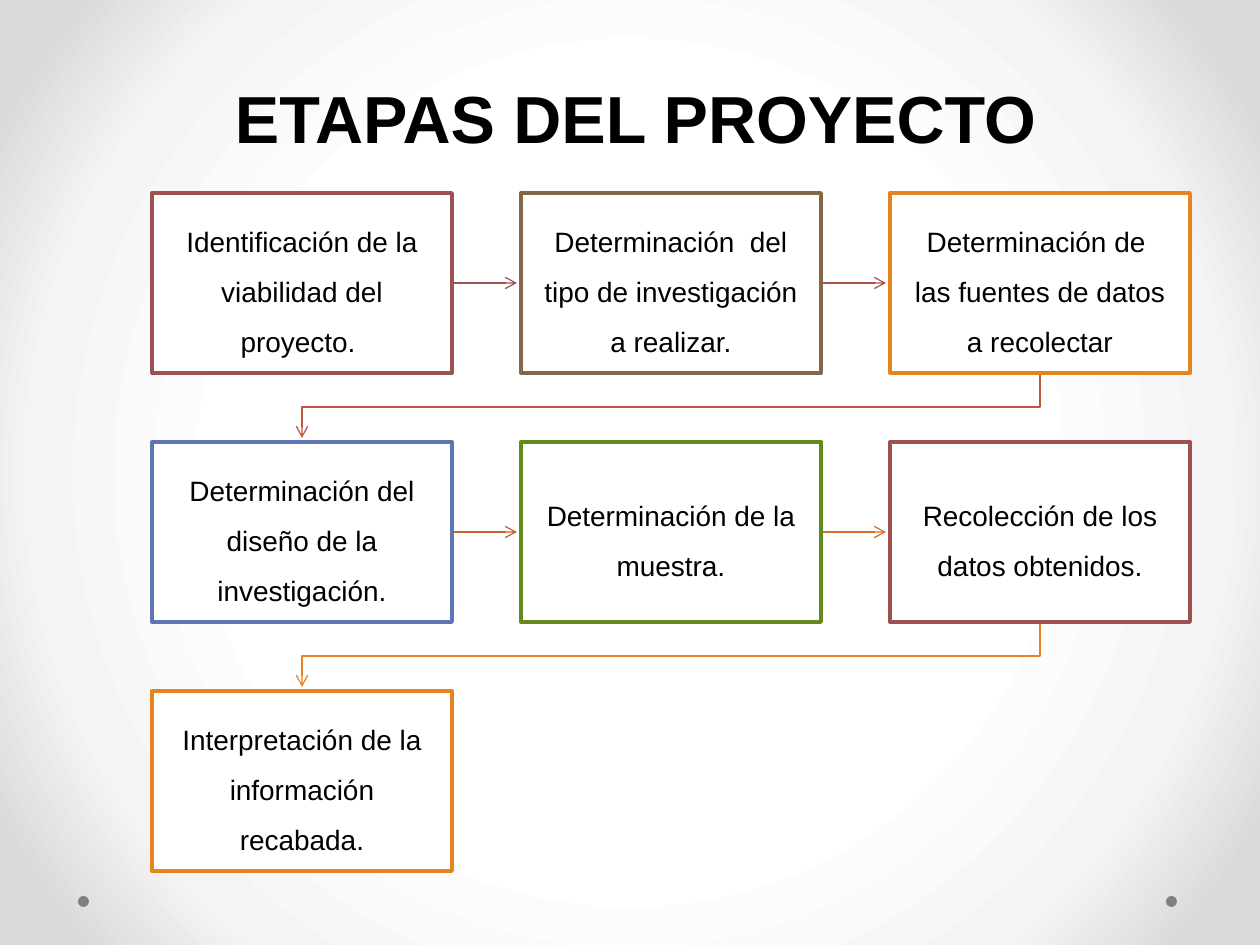
from lxml import etree
from pptx import Presentation
from pptx import util as u
from pptx.dml import color as dml
from pptx.enum import shapes, text
from pptx.oxml import ns

SCALE = 914400 // 126
LEFT, TOP, WIDE, HIGH = 152, 193, 300, 180
STEP, DROP, GAP, COLS = 369, 249, 4, 3

STAGES = [
    ("Identificación de la viabilidad del proyecto. ", "9C5252", "9C5252"),
    ("Determinación  del tipo de investigación a realizar.", "846648", "AB5248"),
    ("Determinación de  las fuentes de datos a recolectar", "E68422", "BB573D"),
    ("Determinación del diseño de la investigación.", "6076B4", "CB6032"),
    ("Determinación de la muestra.", "63891F", "D9702A"),
    ("Recolección de los datos obtenidos.", "9C5252", "E68422"),
    ("Interpretación de la información recabada.", "E68422", None),
]
HEAD = {"size": u.Pt(38), "name": "Arial", "bold": True}
BODY = {"size": u.Pt(16), "name": "Arial", "bold": False}
MID = {"alignment": text.PP_ALIGN.CENTER, "line_spacing": 1.5}
FRAME = {"word_wrap": True, "auto_size": text.MSO_AUTO_SIZE.NONE}


def px(*nums):
    return [u.Emu(num * SCALE) for num in nums]


def tint(code):
    return dml.RGBColor.from_string(code)


def apply(item, vals):
    for key, val in vals.items():
        setattr(item, key, val)


def add(root, tag, **vals):
    return etree.SubElement(root, ns.qn(tag), vals)


def paint(shape, fill, line=None, width=0):
    shape.shadow.inherit = False
    shape.fill.solid()
    shape.fill.fore_color.rgb = tint(fill)
    if line:
        shape.line.color.rgb = tint(line)
        shape.line.width = u.Pt(width)
    else:
        shape.line.fill.background()


def write(shape, words, font, frame, para):
    apply(shape.text_frame, {**FRAME, **frame})
    line = shape.text_frame.paragraphs[0]
    apply(line, {**MID, **para})
    run = line.add_run()
    run.text = words
    apply(run.font, font)
    run.font.color.rgb = tint("000000")


def add_back(slide):
    fill = slide.background.fill
    fill.gradient()
    grad = slide.background._cSld.find(".//" + ns.qn("a:gradFill"))
    for child in list(grad):
        grad.remove(child)
    stops = add(grad, "a:gsLst")
    for pos, code in ((50, "FFFFFF"), (76, "F4F4F4"), (92, "DADADA")):
        stop = add(stops, "a:gs", pos=str(pos * 1000))
        add(stop, "a:srgbClr", val=code)
    shade = add(grad, "a:path", path="circle")
    add(shade, "a:fillToRect", **dict.fromkeys("ltrb", "50000"))


def add_title(slide):
    title = slide.shapes.title
    title.left, title.top, title.width, title.height = px(63, 31, 1134, 861)
    frame = {"vertical_anchor": text.MSO_ANCHOR.TOP, "margin_left": px(24)[0]}
    write(title, "ETAPAS DEL PROYECTO", HEAD, frame, {"space_before": u.Pt(7.6)})


def add_dot(slide, left):
    dot = slide.shapes.add_shape(shapes.MSO_SHAPE.OVAL, *px(left, 896, 11, 11))
    paint(dot, "808080")


def add_box(slide, left, top, words, line):
    box = slide.shapes.add_shape(shapes.MSO_SHAPE.RECTANGLE, *px(left, top, WIDE, HIGH))
    paint(box, "FFFFFF", line, 2.25)
    frame = {f"margin_{side}": px(15)[0] for side in ("left", "top", "right", "bottom")}
    frame["vertical_anchor"] = text.MSO_ANCHOR.MIDDLE
    write(box, words, BODY, frame, {"space_after": u.Pt(5.6)})


def add_link(slide, points, code):
    dots = [px(*point) for point in points]
    if len(dots) == 2:
        kind = shapes.MSO_CONNECTOR.STRAIGHT
        link = slide.shapes.add_connector(kind, *dots[0], *dots[1])
        add(link._element.spPr, "a:effectLst")
    else:
        path = slide.shapes.build_freeform(*dots[0])
        path.add_line_segments(dots[1:], close=False)
        link = path.convert_to_shape()
        link.shadow.inherit = False
        link.fill.background()
    link.line.color.rgb = tint(code)
    link.line.width = u.Pt(0.75)
    add(link.line._get_or_add_ln(), "a:tailEnd", type="arrow")


def route(left, top, col):
    if col < COLS - 1:
        mid = top + HIGH // 2
        return [(left + WIDE, mid), (left + STEP - GAP, mid)]
    start, end = left + WIDE // 2, LEFT + WIDE // 2
    low = top + HIGH
    turn = (low + top + DROP) // 2
    return [(start, low), (start, turn), (end, turn), (end, top + DROP - GAP)]


def main():
    deck = Presentation()
    deck.slide_width, deck.slide_height = px(1260, 945)
    slide = deck.slides.add_slide(deck.slide_layouts[5])
    add_back(slide)
    for left in (1166, 78):
        add_dot(slide, left)
    add_title(slide)
    for num, (words, line, link) in enumerate(STAGES):
        row, col = divmod(num, COLS)
        left, top = LEFT + col * STEP, TOP + row * DROP
        if link:
            add_link(slide, route(left, top, col), link)
        add_box(slide, left, top, words, line)
    deck.save("out.pptx")


if __name__ == "__main__":
    main()
